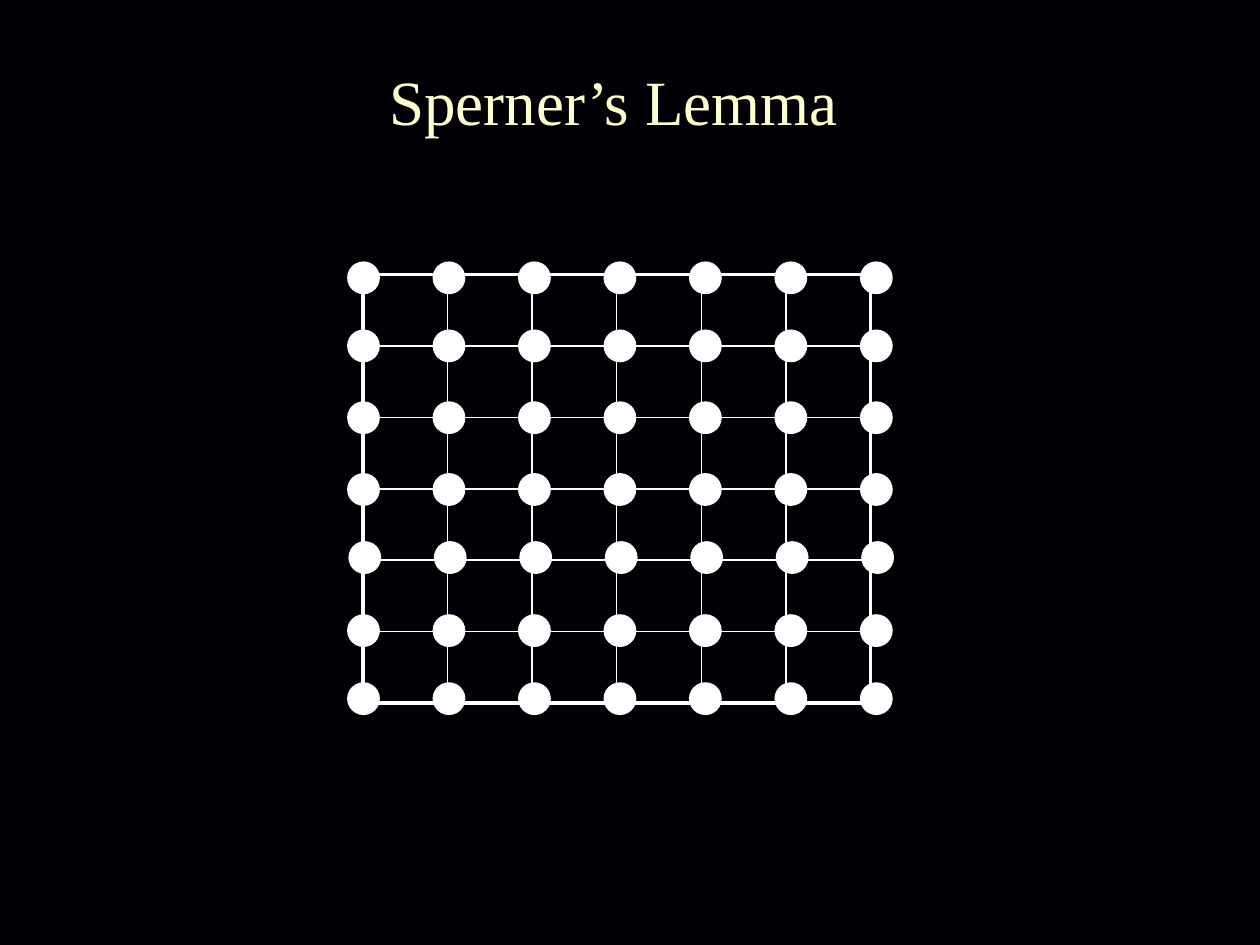
from itertools import product

from lxml.etree import SubElement
from pptx import Presentation
from pptx.dml.color import RGBColor
from pptx.enum.shapes import MSO_SHAPE
from pptx.enum.text import MSO_ANCHOR, PP_ALIGN
from pptx.oxml.ns import qn
from pptx.util import Inches, Pt

BACKGROUND = RGBColor(0x01, 0x00, 0x06)
CREAM = RGBColor(0xFF, 0xFF, 0xCC)
WHITE = RGBColor(0xFF, 0xFF, 0xFF)

CELLS = 6
INNER_WIDTH = Pt(1)
OUTER_WIDTH = Pt(2.25)
DOT_SIZE = 0.25
DOT_ROWS = [(2.76, 2.08), (2.76, 2.62), (2.76, 3.19), (2.76, 3.76),
            (2.77, 4.3), (2.76, 4.88), (2.76, 5.42)]


def set_attributes(target, values):
    for name, value in values.items():
        setattr(target, name, value)


def add_title(slide, left, top, width, height, text):
    box = slide.shapes.add_textbox(Inches(left), Inches(top), Inches(width), Inches(height))
    set_attributes(box.text_frame, {"word_wrap": True, "vertical_anchor": MSO_ANCHOR.MIDDLE})
    paragraph = box.text_frame.paragraphs[0]
    paragraph.alignment = PP_ALIGN.CENTER
    run = paragraph.add_run()
    run.text = text
    set_attributes(run.font, {"name": "Times New Roman", "size": Pt(36)})
    run.font.color.rgb = CREAM


def add_border(cell, side, width):
    properties = cell._tc.get_or_add_tcPr()
    line = SubElement(properties, qn(f"a:ln{side}"), w=str(width))
    fill = SubElement(line, qn("a:solidFill"))
    SubElement(fill, qn("a:srgbClr"), val=str(WHITE))


def add_grid(slide, left, top, width, height):
    frame = slide.shapes.add_table(CELLS, CELLS, Inches(left), Inches(top),
                                   Inches(width), Inches(height))
    table = frame.table
    set_attributes(table, {"first_row": False, "horz_banding": False})
    last = CELLS - 1
    for row, column in product(range(CELLS), repeat=2):
        cell = table.cell(row, column)
        outer_sides = {"L": column == 0, "R": column == last, "T": row == 0, "B": row == last}
        for side, is_outer in outer_sides.items():
            add_border(cell, side, OUTER_WIDTH if is_outer else INNER_WIDTH)
        cell.fill.background()


def add_dot_row(slide, left, top, width):
    step = (width - DOT_SIZE) / CELLS
    for column in range(CELLS + 1):
        dot = slide.shapes.add_shape(MSO_SHAPE.OVAL, Inches(left + column * step), Inches(top),
                                     Inches(DOT_SIZE), Inches(DOT_SIZE))
        dot.shadow.inherit = False
        dot.fill.solid()
        dot.fill.fore_color.rgb = WHITE
        dot.line.color.rgb = WHITE
        dot.line.width = Pt(0.75)


def main():
    presentation = Presentation()
    set_attributes(presentation, {"slide_width": Inches(10), "slide_height": Inches(7.5)})
    slide = presentation.slides.add_slide(presentation.slide_layouts[6])
    slide.background.fill.solid()
    slide.background.fill.fore_color.rgb = BACKGROUND
    add_title(slide, 0.08, 0.17, 9.58, 1.25, "Sperner’s Lemma")
    add_grid(slide, 2.88, 2.18, 4.03, 3.4)
    for left, top in DOT_ROWS:
        add_dot_row(slide, left, top, 4.32)
    presentation.save("out.pptx")


if __name__ == "__main__":
    main()
